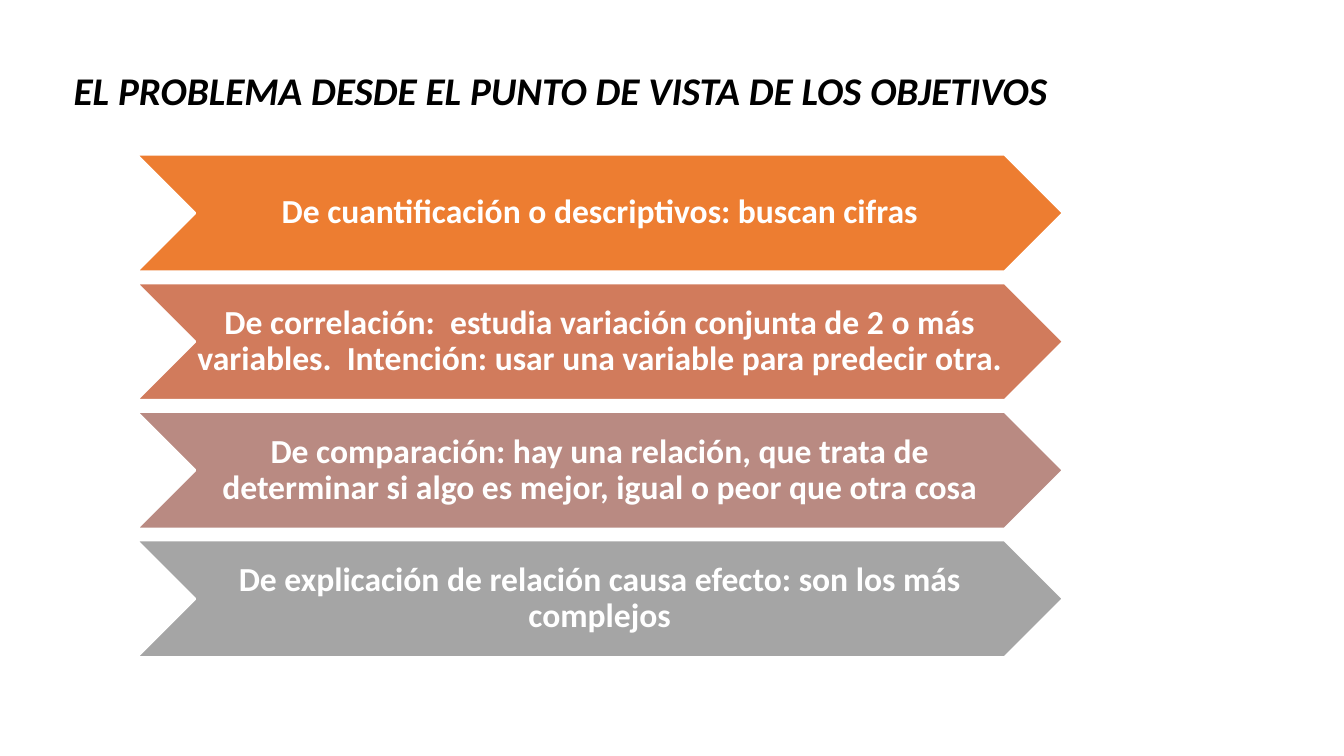
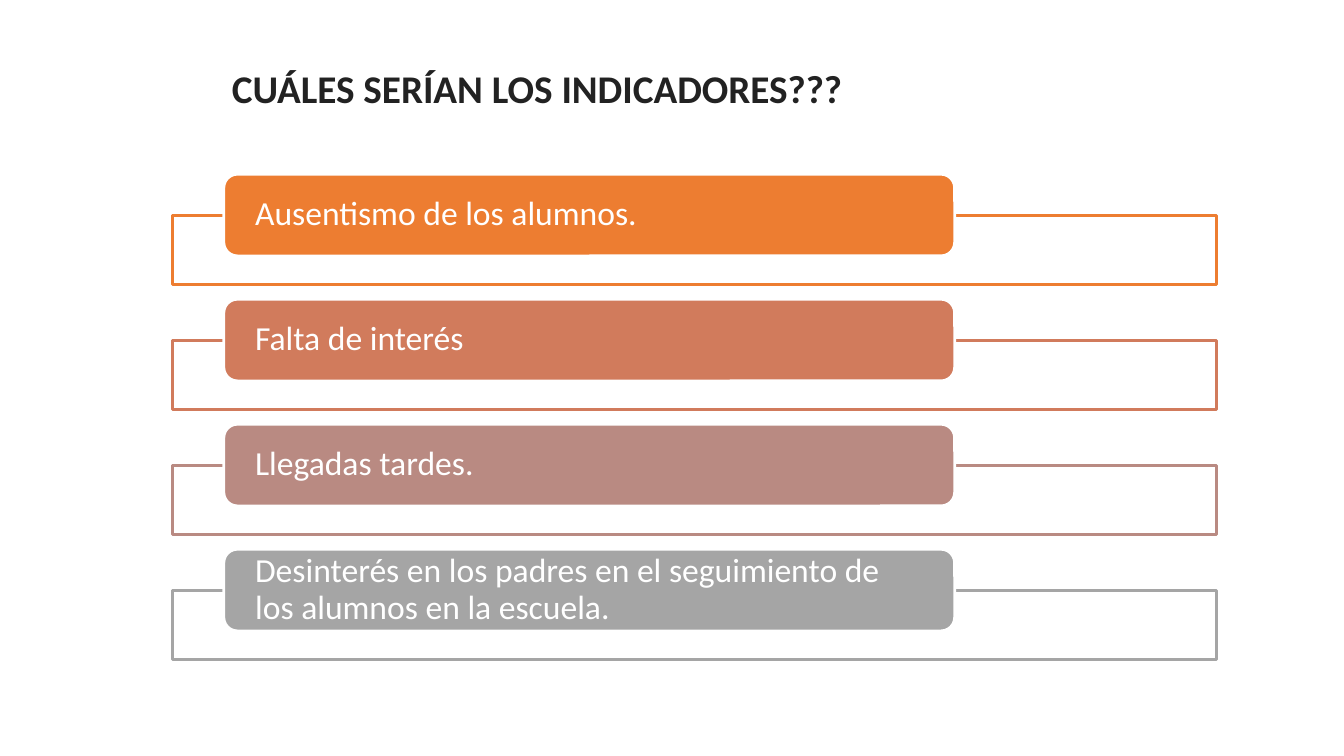
from pptx import Presentation
from pptx.dml.color import RGBColor
from pptx.enum import shapes, text
from pptx.util import Cm, Pt

FONT = "Calibri"
HUES = {"white": "FFFFFF", "black": "000000", "ink": "222222",
        "orange": "ED7D31", "clay": "D17B5C", "rose": "B98A82", "gray": "A5A5A5"}
STEPS = ["orange", "clay", "rose", "gray"]

GOALS = {
    "title": "EL PROBLEMA DESDE EL PUNTO DE VISTA DE LOS OBJETIVOS",
    "box": (1.6, 1.55, 25.48, 1.45), "hue": "black", "italic": True,
    "items": [
        "De cuantificación o descriptivos: buscan cifras",
        "De correlación:  estudia variación conjunta de 2 o más variables.  "
        "Intención: usar una variable para predecir otra.",
        "De comparación: hay una relación, que trata de determinar si algo "
        "es mejor, igual o peor que otra cosa",
        "De explicación de relación causa efecto: son los más complejos",
    ],
}
SIGNS = {
    "title": "CUÁLES SERÍAN LOS INDICADORES???",
    "box": (5.59, 1.5, 16.15, 1.45), "hue": "ink", "italic": False,
    "items": [
        "Ausentismo de los alumnos.",
        "Falta de interés",
        "Llegadas tardes.",
        "Desinterés en los padres en el seguimiento de los alumnos en la escuela.",
    ],
}


def color(name):
    return RGBColor.from_string(HUES[name])


def write(shape, words, size, hue, align, bold=False, italic=False):
    frame = shape.text_frame
    frame.word_wrap = True
    frame.vertical_anchor = text.MSO_ANCHOR.MIDDLE
    para = frame.paragraphs[0]
    para.alignment = align
    run = para.add_run()
    run.text = words
    font = run.font
    font.name, font.size = FONT, Pt(size)
    font.bold, font.italic = bold, italic
    font.color.rgb = color(hue)
    return frame, para


def start(deck, data):
    """Add a slide with its title."""
    slide = deck.slides.add_slide(deck.slide_layouts[5])
    title = slide.shapes.title
    title.left, title.top, title.width, title.height = map(Cm, data["box"])
    frame, _ = write(title, data["title"], 28, data["hue"], text.PP_ALIGN.LEFT,
                     True, data["italic"])
    frame.auto_size = text.MSO_AUTO_SIZE.NONE
    return slide


def block(slide, kind, box, fill, line):
    shape = slide.shapes.add_shape(kind, *map(Cm, box))
    shape.shadow.inherit = False
    shape.fill.solid()
    shape.fill.fore_color.rgb = color(fill)
    shape.line.color.rgb = color(line)
    shape.line.width = Pt(2)
    return shape


def label(shape, words, align, pad, bold=False):
    frame, para = write(shape, words, 24, "white", align, bold)
    frame.margin_left = frame.margin_right = Cm(pad)
    frame.margin_top = frame.margin_bottom = 0
    para.line_spacing = 0.9


def goals(deck):
    slide = start(deck, GOALS)
    for i, (words, hue) in enumerate(zip(GOALS["items"], STEPS)):
        box = (3.43, 3.89 + i * 3.24, 23.37, 2.96)
        arrow = block(slide, shapes.MSO_SHAPE.CHEVRON, box, hue, "white")
        label(arrow, words, text.PP_ALIGN.CENTER, 0.03, True)


def signs(deck):
    slide = start(deck, SIGNS)
    for i, (words, hue) in enumerate(zip(SIGNS["items"], STEPS)):
        top = 4.39 + i * 3.15
        block(slide, shapes.MSO_SHAPE.RECTANGLE,
              (4.34, top + 1.04, 26.31, 1.75), "white", hue)
        tab = block(slide, shapes.MSO_SHAPE.ROUNDED_RECTANGLE,
                    (5.64, top, 18.42, 2.06), hue, "white")
        label(tab, words, text.PP_ALIGN.LEFT, 0.69)


def main():
    deck = Presentation()
    deck.slide_width, deck.slide_height = Cm(33.87), Cm(19.05)
    goals(deck)
    signs(deck)
    deck.save("out.pptx")


if __name__ == "__main__":
    main()
